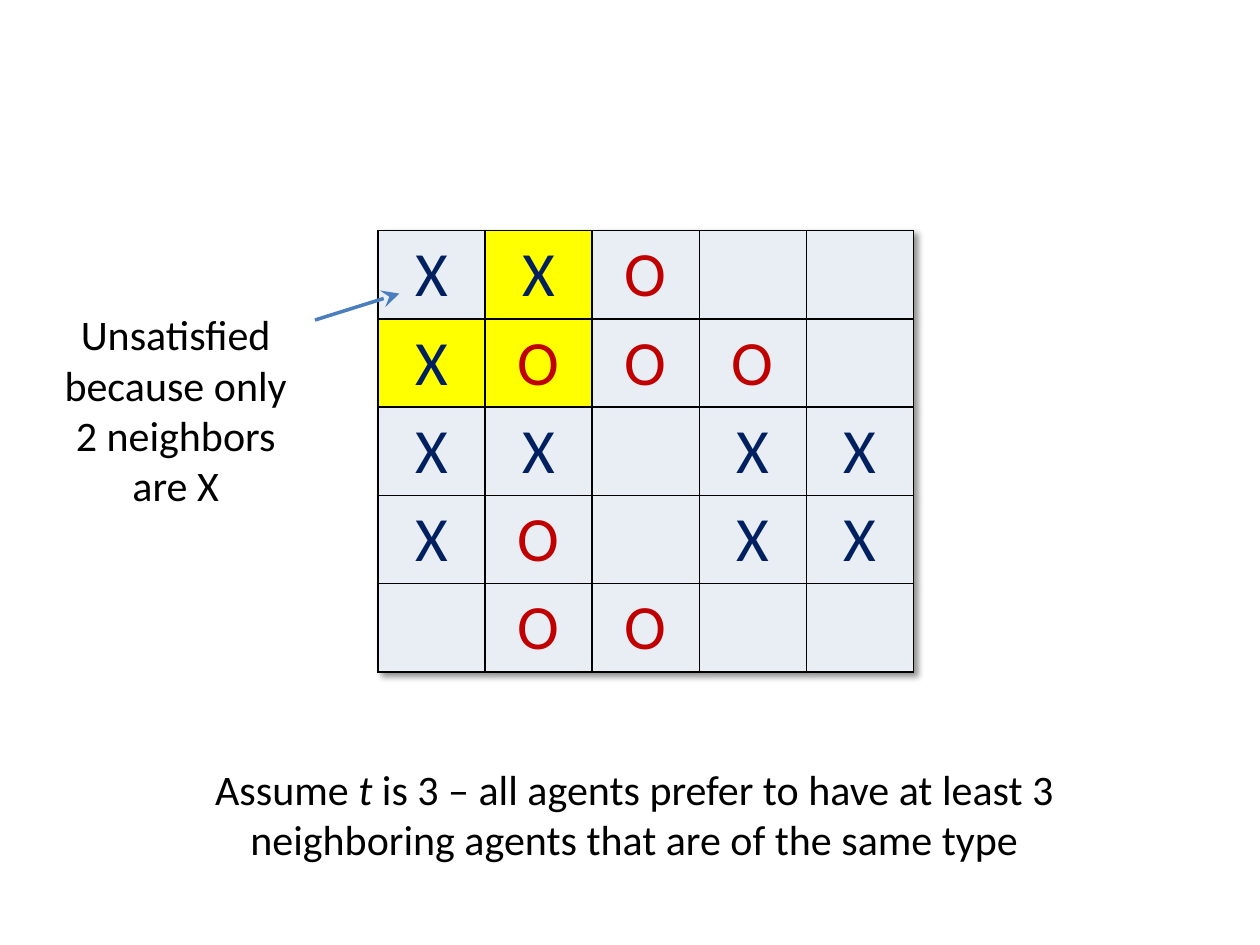
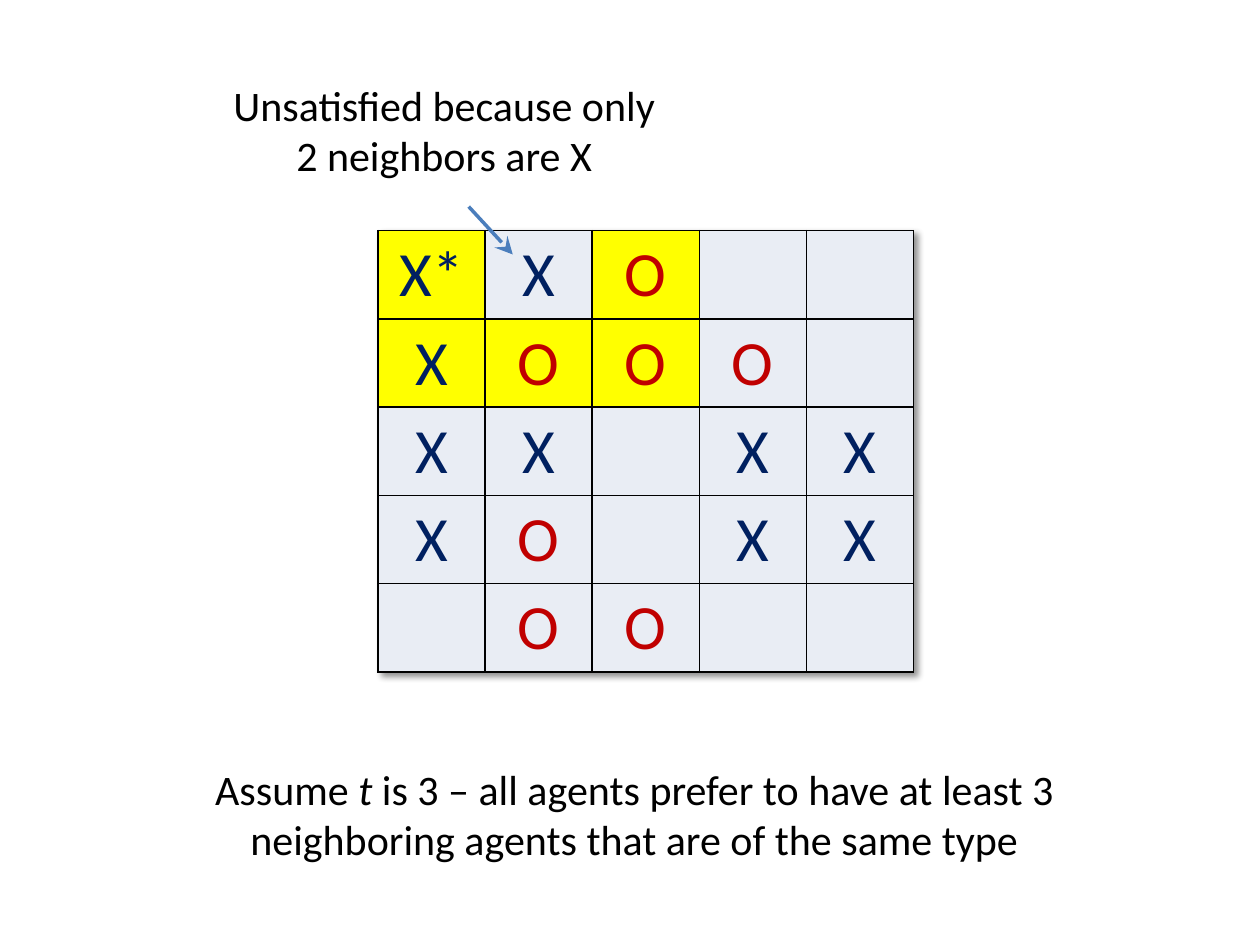
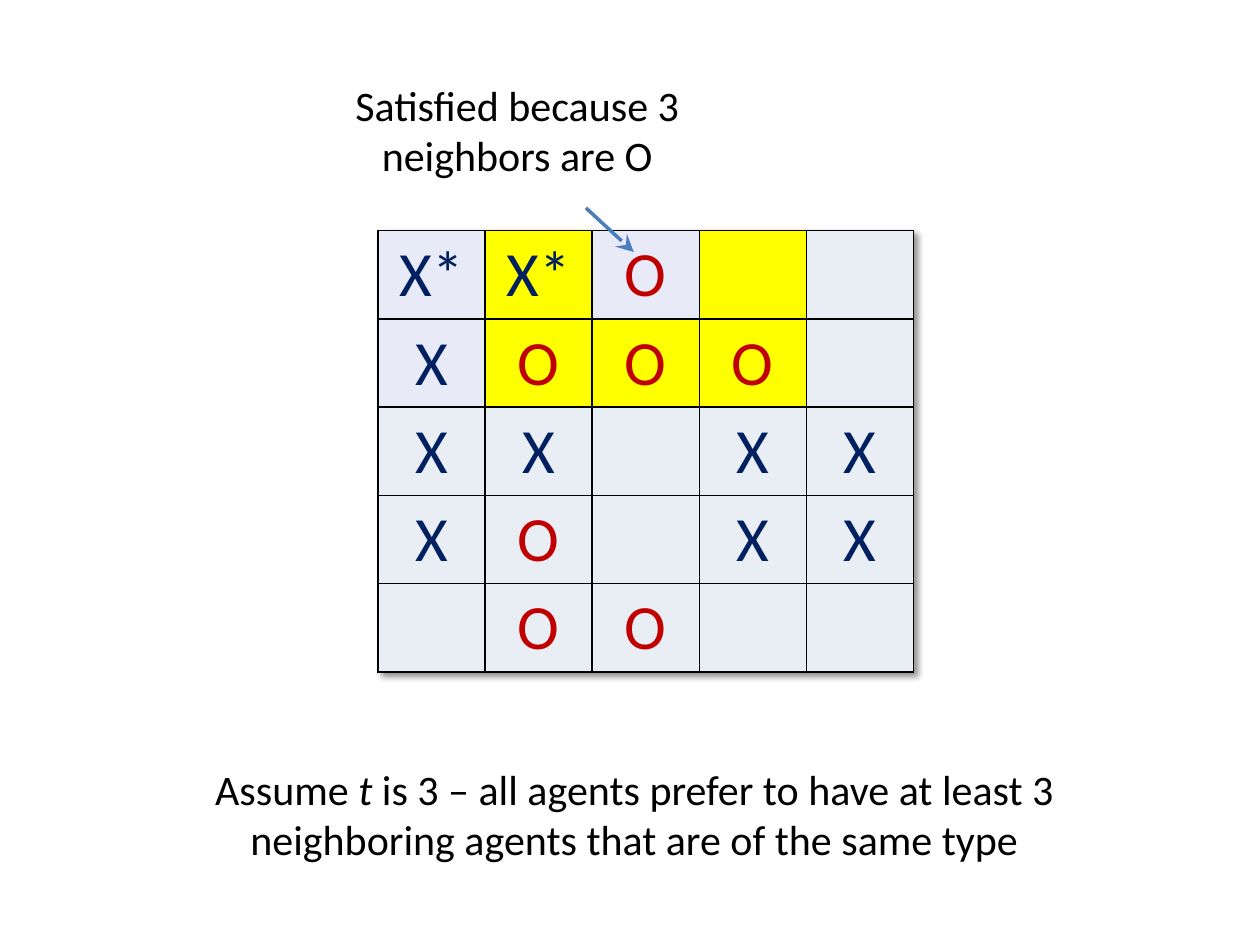
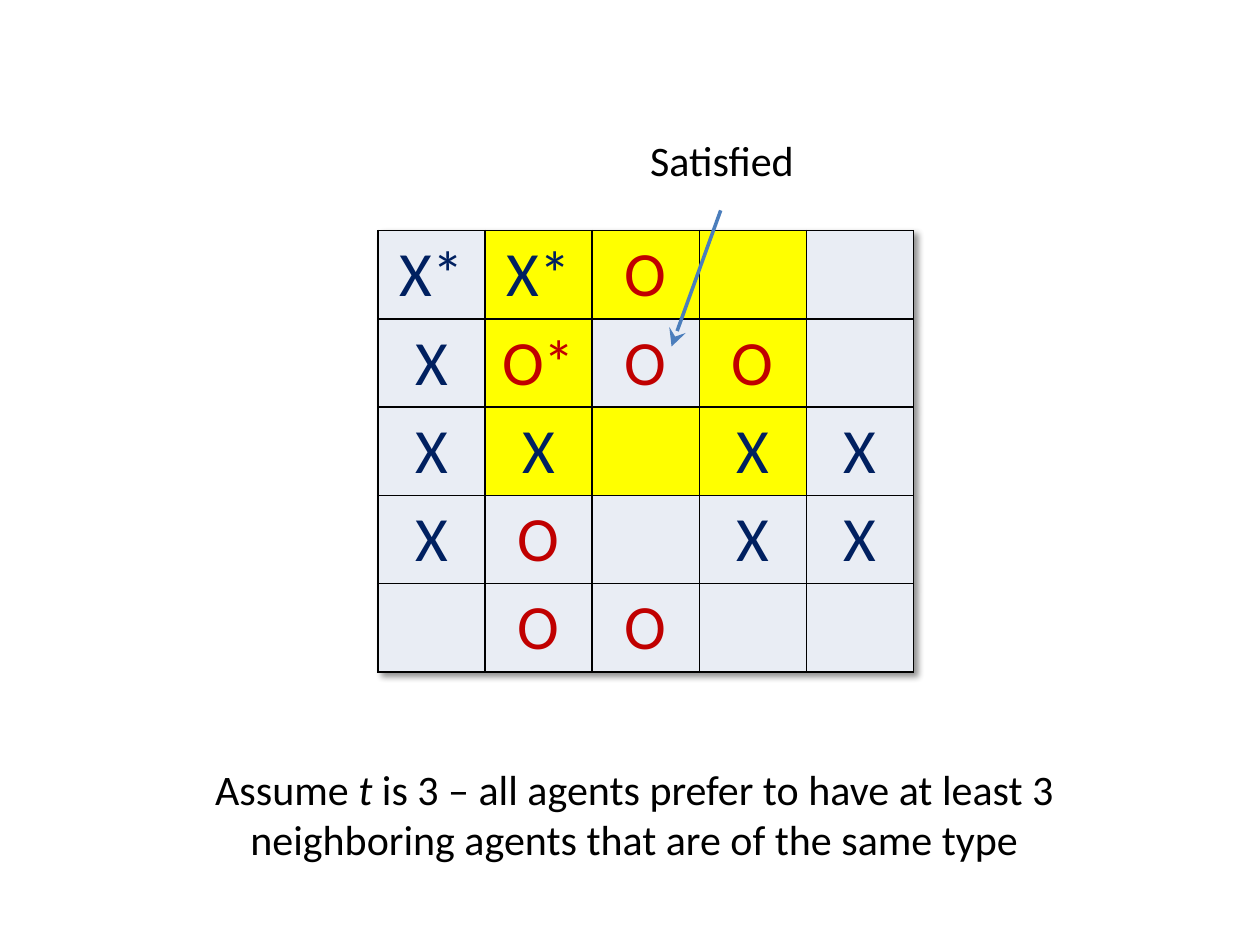
"""Build four slides that walk through agents and their neighbors on a grid."""
from lxml import etree
from pptx import Presentation
from pptx.dml.color import RGBColor
from pptx.enum import shapes, text
from pptx.oxml import parse_xml
from pptx.oxml.ns import nsdecls, qn
from pptx.util import Inches, Pt

FONT = "Calibri"
BLACK = RGBColor(0x00, 0x00, 0x00)
NAVY = RGBColor(0x00, 0x20, 0x60)
RED = RGBColor(0xC0, 0x00, 0x00)
BLUE = RGBColor(0x4B, 0x7E, 0xBC)
YELLOW = RGBColor(0xFF, 0xFF, 0x00)
PALE = RGBColor(0xE9, 0xED, 0xF4)
LILAC = RGBColor(0xE9, 0xEA, 0xF7)

AGENTS = ["XXO  ", "XOOO ", "XX XX", "XO XX", " OO  "]
LEFT, TOP, WIDE, HIGH = 3, 1.83, 0.85, 0.7
RULE = [
    ("Assume ", False),
    ("t", True),
    (" is 3 – all agents prefer to have at least 3 neighboring agents "
     "that are of the same type", False),
]
RULE_BOX = (0.95, 6.01, 8.17, 0.91)
UNHAPPY = "Unsatisfied because only 2 neighbors are X"

STEPS = [
    {"note": UNHAPPY, "box": (0.33, 2.4, 2.13, 1.72),
     "arrow": (2.5, 2.54, 3.17, 2.33),
     "focus": (0, 0), "stars": [], "lilac": []},
    {"note": UNHAPPY, "box": (1.75, 0.58, 3.55, 0.91),
     "arrow": (3.72, 1.64, 4.07, 2.02),
     "focus": (0, 1), "stars": [(0, 0)], "lilac": []},
    {"note": "Satisfied because 3 neighbors are O",
     "box": (2.33, 0.58, 3.55, 0.91), "arrow": (4.65, 1.65, 5.03, 2),
     "focus": (0, 2), "stars": [(0, 0), (0, 1)],
     "lilac": [(0, 0), (0, 2), (1, 0)]},
    {"note": "Satisfied", "box": (3.44, 1.02, 4.58, 0.5),
     "arrow": (5.72, 1.67, 5.33, 2.75),
     "focus": (1, 2), "stars": [(0, 0), (0, 1), (1, 1)], "lilac": []},
]


def style(para, size, color):
    """Center a paragraph and set its font."""
    para.alignment = text.PP_ALIGN.CENTER
    para.font.name = FONT
    para.font.size = Pt(size)
    para.font.color.rgb = color


def add_text(slide, box, runs):
    """Add a wrapped, centered text box from (words, italic) runs."""
    frame = slide.shapes.add_textbox(*map(Inches, box)).text_frame
    frame.word_wrap = True
    frame.auto_size = text.MSO_AUTO_SIZE.SHAPE_TO_FIT_TEXT
    para = frame.paragraphs[0]
    style(para, 24, BLACK)
    for words, slant in runs:
        run = para.add_run()
        run.text = words
        if slant:
            run.font.italic = True


def add_edges(cell):
    """Draw a thin black line on all four sides of a cell."""
    props = cell._tc.get_or_add_tcPr()
    for spot, side in enumerate("LRTB"):
        props.insert(spot, parse_xml(
            f'<a:ln{side} {nsdecls("a")} w="12700"><a:solidFill>'
            f'<a:srgbClr val="{BLACK}"/></a:solidFill></a:ln{side}>'))


def pick_fill(spot, step):
    """Return yellow for neighbors of the focus and a pale fill elsewhere."""
    gap = max(abs(a - b) for a, b in zip(spot, step["focus"]))
    if gap == 1:
        return YELLOW
    return LILAC if spot in step["lilac"] else PALE


def add_grid(slide, step):
    """Add the table of agents with its shadow."""
    rows, cols = len(AGENTS), len(AGENTS[0])
    size = (LEFT, TOP, WIDE * cols, HIGH * rows)
    table = slide.shapes.add_table(rows, cols, *map(Inches, size)).table
    table.first_row = table.horz_banding = False
    table._tbl.tblPr.insert(0, parse_xml(
        f'<a:effectLst {nsdecls("a")}><a:outerShdw blurRad="50800" '
        'dist="38100" dir="2700000" algn="tl" rotWithShape="0">'
        '<a:srgbClr val="000000"><a:alpha val="43000"/></a:srgbClr>'
        '</a:outerShdw></a:effectLst>'))
    for row, line in enumerate(AGENTS):
        for col, agent in enumerate(line):
            spot, cell = (row, col), table.cell(row, col)
            cell.fill.solid()
            cell.fill.fore_color.rgb = pick_fill(spot, step)
            add_edges(cell)
            if agent != " ":
                cell.text = agent + ("*" if spot in step["stars"] else "")
                style(cell.text_frame.paragraphs[0], 36,
                      NAVY if agent == "X" else RED)


def add_arrow(slide, ends):
    """Add a straight arrow without a shadow."""
    arrow = slide.shapes.add_connector(
        shapes.MSO_CONNECTOR.STRAIGHT, *map(Inches, ends))
    arrow.line.color.rgb = BLUE
    arrow.line.width = Pt(2)
    etree.SubElement(arrow.line._get_or_add_ln(), qn("a:tailEnd"),
                     type="stealth", w="lg", len="lg")
    etree.SubElement(arrow._element.spPr, qn("a:effectLst"))


def main():
    """Build and save the slides."""
    deck = Presentation()
    deck.slide_width, deck.slide_height = Inches(10), Inches(7.5)
    for step in STEPS:
        slide = deck.slides.add_slide(deck.slide_layouts[6])
        add_text(slide, step["box"], [(step["note"], False)])
        add_grid(slide, step)
        add_arrow(slide, step["arrow"])
        add_text(slide, RULE_BOX, RULE)
    deck.save("out.pptx")


if __name__ == "__main__":
    main()
